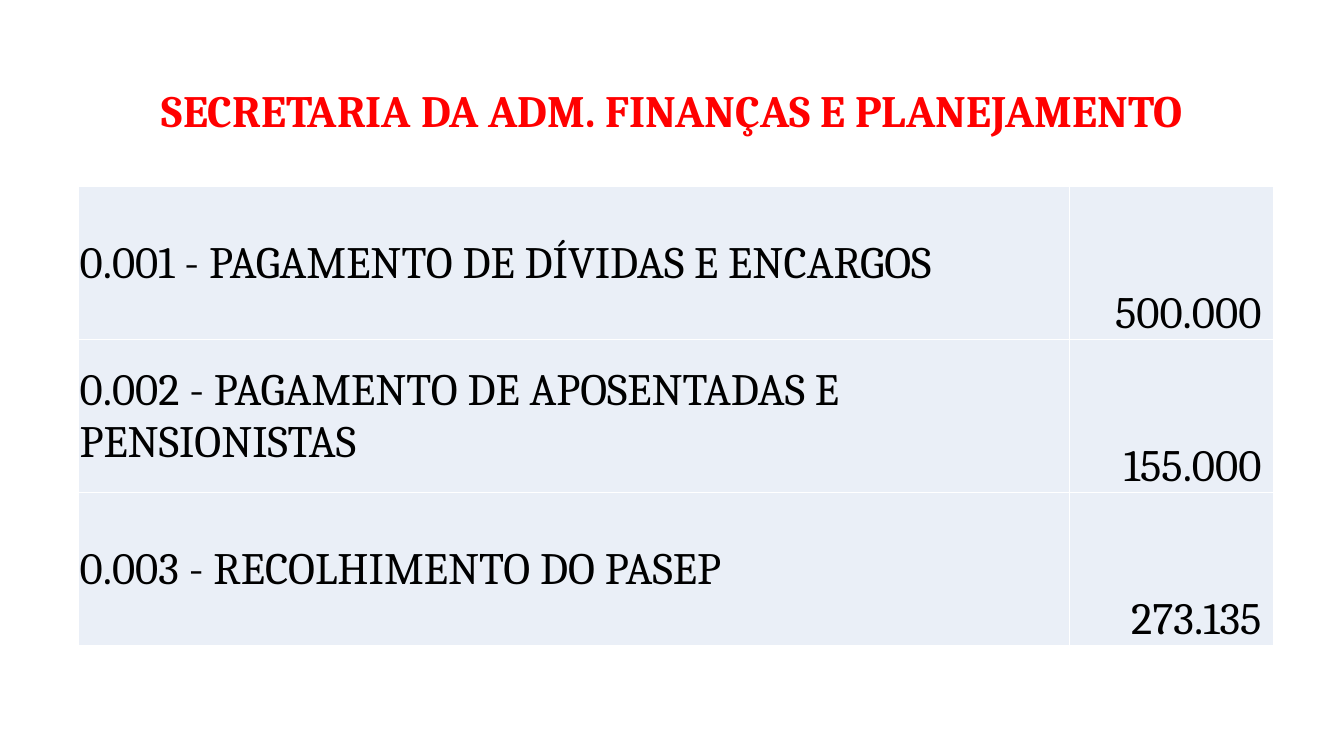
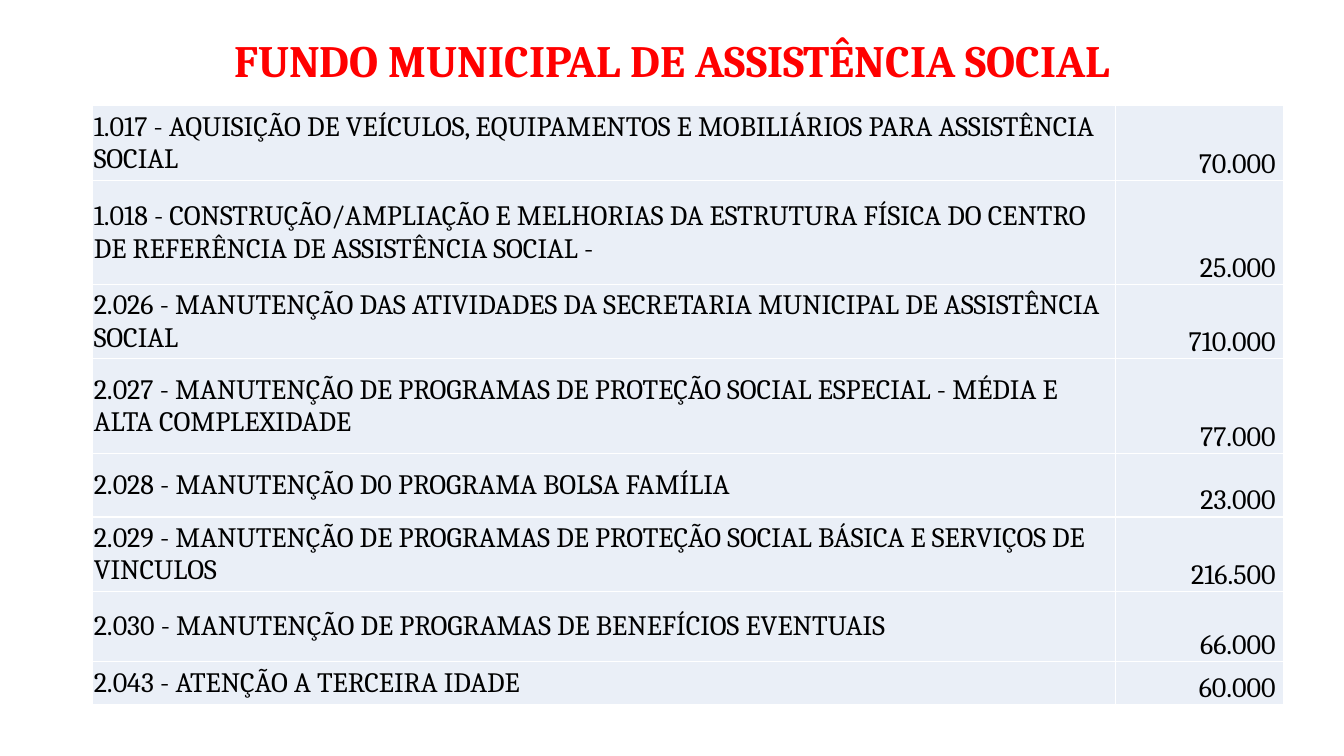
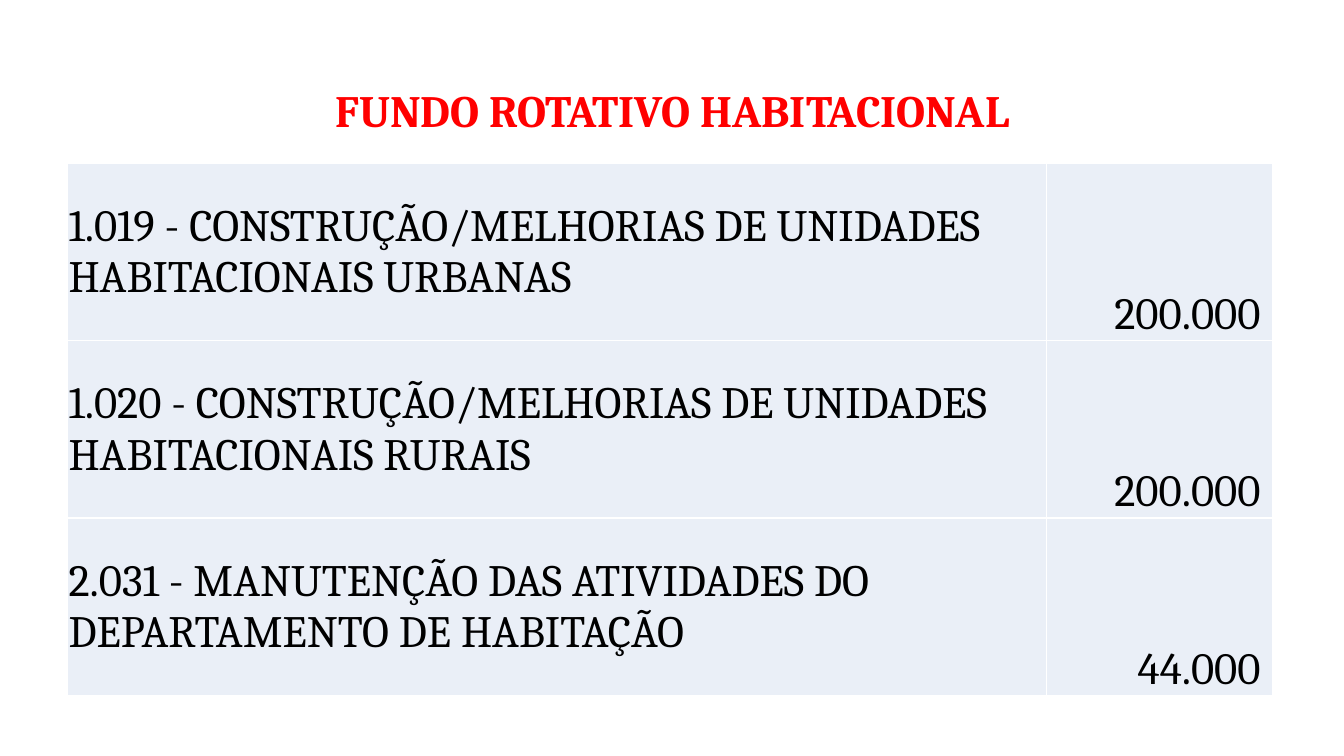
"""Build three budget slides, each a red title over a two-column table."""
from lxml import etree
from pptx import Presentation
from pptx.dml.color import RGBColor
from pptx.enum import text
from pptx.oxml import ns
from pptx.util import Inches, Pt

FONT = "Cambria"
COLORS = {"title": "FF0000", "text": "000000", "cell": "EAEFF7", "border": "FFFFFF"}
TITLE_BOX = (0.92, 0.4, 11.5, 1.45)

FINANCE = [
    ("0.001 - PAGAMENTO DE DÍVIDAS E ENCARGOS", "500.000"),
    ("0.002 - PAGAMENTO DE APOSENTADAS E PENSIONISTAS", "155.000"),
    ("0.003 - RECOLHIMENTO DO PASEP", "273.135"),
]
SOCIAL = [
    ("1.017 - AQUISIÇÃO DE VEÍCULOS, EQUIPAMENTOS E MOBILIÁRIOS PARA ASSISTÊNCIA SOCIAL", "70.000"),
    ("1.018 - CONSTRUÇÃO/AMPLIAÇÃO E MELHORIAS DA ESTRUTURA FÍSICA DO CENTRO "
     "DE REFERÊNCIA DE ASSISTÊNCIA SOCIAL -", "25.000"),
    ("2.026 - MANUTENÇÃO DAS ATIVIDADES DA SECRETARIA MUNICIPAL DE ASSISTÊNCIA SOCIAL", "710.000"),
    ("2.027 - MANUTENÇÃO DE PROGRAMAS DE PROTEÇÃO SOCIAL ESPECIAL - MÉDIA E "
     "ALTA COMPLEXIDADE", "77.000"),
    ("2.028 - MANUTENÇÃO D0 PROGRAMA BOLSA FAMÍLIA", "23.000"),
    ("2.029 - MANUTENÇÃO DE PROGRAMAS DE PROTEÇÃO SOCIAL BÁSICA E SERVIÇOS DE VINCULOS", "216.500"),
    ("2.030 - MANUTENÇÃO DE PROGRAMAS DE BENEFÍCIOS EVENTUAIS", "66.000"),
    ("2.043 - ATENÇÃO A TERCEIRA IDADE", "60.000"),
]
HOUSING = [
    ("1.019 - CONSTRUÇÃO/MELHORIAS DE UNIDADES HABITACIONAIS URBANAS", "200.000"),
    ("1.020 - CONSTRUÇÃO/MELHORIAS DE UNIDADES HABITACIONAIS RURAIS", "200.000"),
    ("2.031 - MANUTENÇÃO DAS ATIVIDADES DO DEPARTAMENTO DE HABITAÇÃO", "44.000"),
]


def write(tf, content, size=32, color="text", bold=False, align="LEFT", spacing=1.0):
    """Write one formatted paragraph into a text frame."""
    tf.word_wrap = True
    p = tf.paragraphs[0]
    p.alignment = getattr(text.PP_ALIGN, align)
    p.line_spacing = spacing
    r = p.add_run()
    r.text = content
    r.font.name, r.font.size, r.font.bold = FONT, Pt(size), bold
    r.font.color.rgb = RGBColor.from_string(COLORS[color])


def add_title(s, content, box):
    """Place and format the title placeholder."""
    sp = s.shapes.title
    sp.left, sp.top, sp.width, sp.height = map(Inches, box)
    tf = sp.text_frame
    tf.auto_size = text.MSO_AUTO_SIZE.NONE
    tf.vertical_anchor = text.MSO_ANCHOR.MIDDLE
    write(tf, content, color="title", bold=True, align="CENTER", spacing=0.9)


def add_borders(cell):
    """Draw a thin border on every side of a cell."""
    tc_pr = cell._tc.get_or_add_tcPr()
    for side in ("a:lnL", "a:lnR", "a:lnT", "a:lnB"):
        ln = etree.SubElement(tc_pr, ns.qn(side), w=str(Pt(1)))
        fill = etree.SubElement(ln, ns.qn("a:solidFill"))
        etree.SubElement(fill, ns.qn("a:srgbClr"), val=COLORS["border"])


def format_cell(cell, anchor, right=0.01):
    """Set the borders, fill, margins and anchor of a cell."""
    add_borders(cell)
    cell.fill.solid()
    cell.fill.fore_color.rgb = RGBColor.from_string(COLORS["cell"])
    cell.margin_left = cell.margin_top = Inches(0.01)
    cell.margin_right, cell.margin_bottom = Inches(right), 0
    cell.vertical_anchor = anchor


def add_budget(s, items, left, top, widths, heights, size=32):
    """Add a table of budget items and their amounts."""
    frame = s.shapes.add_table(len(items), 2, Inches(left), Inches(top),
                               Inches(sum(widths)), Inches(sum(heights)))
    table = frame.table
    table.first_row = table.horz_banding = False
    for column, width in zip(table.columns, widths):
        column.width = Inches(width)
    for row, height, (item, amount) in zip(table.rows, heights, items):
        row.height = Inches(height)
        name, value = row.cells
        format_cell(name, text.MSO_ANCHOR.MIDDLE)
        write(name.text_frame, item, size=size)
        format_cell(value, text.MSO_ANCHOR.BOTTOM, right=0.01 + size / 300)
        write(value.text_frame, amount, size=size, align="RIGHT")


def add_slide(prs, title, items, title_box=TITLE_BOX, **layout):
    """Add a slide with a title and a budget table."""
    s = prs.slides.add_slide(prs.slide_layouts[5])
    add_title(s, title, title_box)
    add_budget(s, items, **layout)


def main():
    """Build and save the presentation."""
    prs = Presentation()
    prs.slide_width, prs.slide_height = Inches(13.33), Inches(7.5)
    add_slide(prs, "SECRETARIA DA ADM. FINANÇAS E PLANEJAMENTO", FINANCE,
              left=0.78, top=1.85, widths=(9.83, 2.02), heights=[1.52] * 3)
    add_slide(prs, "FUNDO MUNICIPAL DE ASSISTÊNCIA SOCIAL", SOCIAL,
              title_box=(0.92, 0.19, 11.5, 0.86), left=0.92, top=1.05, widths=(10.14, 1.67),
              heights=(0.74, 1.03, 0.74, 0.94, 0.63, 0.74, 0.69, 0.43), size=20)
    add_slide(prs, "FUNDO ROTATIVO HABITACIONAL", HOUSING,
              left=0.67, top=1.62, widths=(9.71, 2.24), heights=[1.76] * 3)
    prs.save("out.pptx")


if __name__ == "__main__":
    main()
